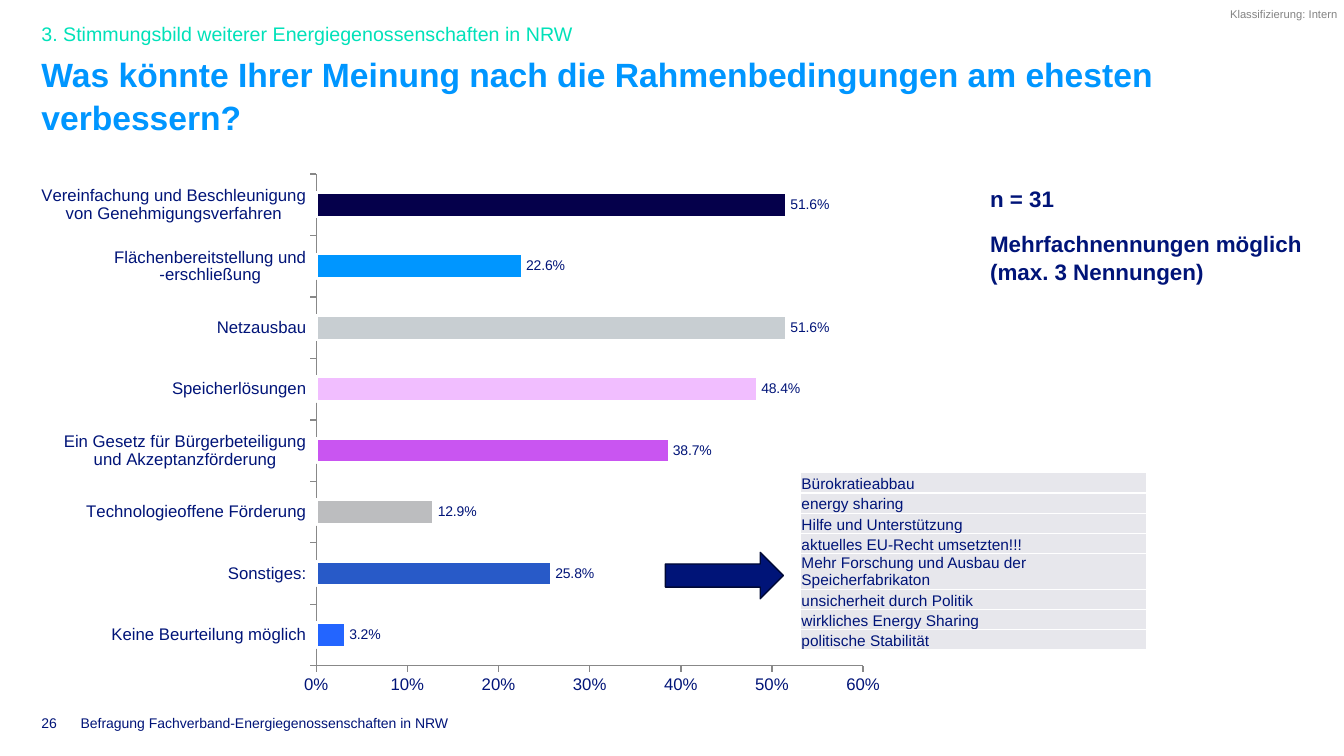
from lxml.etree import SubElement
from pptx import Presentation
from pptx.chart.data import CategoryChartData
from pptx.dml.color import RGBColor
from pptx.enum.chart import XL_CHART_TYPE as ChartType
from pptx.enum.chart import XL_LABEL_POSITION as LabelPos
from pptx.enum.chart import XL_TICK_LABEL_POSITION as TickLabelPos
from pptx.enum.chart import XL_TICK_MARK as TickMark
from pptx.enum.shapes import MSO_SHAPE as Shape
from pptx.enum.text import MSO_ANCHOR as Anchor
from pptx.enum.text import MSO_AUTO_SIZE as AutoSize
from pptx.enum.text import PP_ALIGN as Align
from pptx.oxml.ns import qn
from pptx.util import Inches, Pt

COLORS = {
    "navy": "001478", "sky": "0096FF", "mint": "00E1B9", "grey": "838383",
    "axis": "888888", "edge": "000935", "cell": "E7E7EC", "white": "FFFFFF",
    "bright": "2365FF", "royal": "285AC8", "silver": "BCBDBF", "violet": "C955F1",
    "pink": "F1BEFF", "mist": "C8CED2", "ink": "05004B",
}

ANSWERS = [
    ("Keine Beurteilung möglich", 0.032, "bright"),
    ("Sonstiges:", 0.258, "royal"),
    ("Technologieoffene Förderung", 0.129, "silver"),
    ("Ein Gesetz für Bürgerbeteiligung und Akzeptanzförderung", 0.387, "violet"),
    ("Speicherlösungen", 0.484, "pink"),
    ("Netzausbau", 0.516, "mist"),
    ("Flächenbereitstellung und -erschließung", 0.226, "sky"),
    ("Vereinfachung und Beschleunigung von Genehmigungsverfahren", 0.516, "ink"),
]

OTHER_ANSWERS = [
    ("Bürokratieabbau", 1),
    ("energy sharing", 1),
    ("Hilfe und Unterstützung", 1),
    ("aktuelles EU-Recht umsetzten!!!", 1),
    ("Mehr Forschung und Ausbau der Speicherfabrikaton", 1.75),
    ("unsicherheit durch Politik", 1),
    ("wirkliches Energy Sharing", 1),
    ("politische Stabilität", 1),
]

LEFT = 3.08
FOOT = 94.67


def rgb(name):
    return RGBColor.from_string(COLORS[name])


class SurveySlide:
    font = "Arial"

    def __init__(self, prs):
        self.width, self.height = prs.slide_width, prs.slide_height
        self.s = prs.slides.add_slide(prs.slide_layouts[1])

    def box(self, x, y, w, h):
        return (int(self.width * x / 100), int(self.height * y / 100),
                int(self.width * w / 100), int(self.height * h / 100))

    def style(self, font, size, color="navy", bold=False):
        font.name, font.size, font.bold = self.font, Pt(size), bold
        font.color.rgb = rgb(color)

    def fill_text(self, sp, lines, size, color="navy", bold=False,
                  anchor=Anchor.TOP, wrap=True, spacing=1.0, gap=0):
        tf = sp.text_frame
        tf.auto_size, tf.word_wrap, tf.vertical_anchor = AutoSize.NONE, wrap, anchor
        tf.margin_left = tf.margin_right = tf.margin_top = tf.margin_bottom = 0
        for i, line in enumerate(lines):
            p = tf.add_paragraph() if i else tf.paragraphs[0]
            p.alignment, p.line_spacing = Align.LEFT, spacing
            p.space_before = Pt(gap if i else 0)
            r = p.add_run()
            r.text = line
            self.style(r.font, size, color, bold)

    def placeholder(self, idx, area, line, size, color, **options):
        sp = self.s.placeholders[idx]
        sp.left, sp.top, sp.width, sp.height = self.box(*area)
        self.fill_text(sp, [line], size, color, **options)
        if idx:
            pPr = sp.text_frame.paragraphs[0]._p.get_or_add_pPr()
            pPr.set("marL", "0")
            pPr.set("indent", "0")
            SubElement(pPr, qn("a:buNone"))

    def text(self, area, lines, size, color="navy", **options):
        sp = self.s.shapes.add_textbox(*self.box(*area))
        self.fill_text(sp, lines, size, color, **options)

    def axis(self, axis):
        axis.has_major_gridlines = False
        axis.major_tick_mark, axis.minor_tick_mark = TickMark.OUTSIDE, TickMark.NONE
        axis.format.line.color.rgb = rgb("axis")
        axis.format.line.width = Pt(1)
        axis.tick_label_position = TickLabelPos.LOW
        self.style(axis.tick_labels.font, 12)

    def bars(self, area, answers, plot_area):
        names, values, colors = zip(*answers)
        data = CategoryChartData()
        data.categories = names
        data.add_series("Series 1", values)
        chart = self.s.shapes.add_chart(ChartType.BAR_CLUSTERED, *self.box(*area), data).chart
        chart.has_legend = chart.has_title = False
        self.style(chart.font, 10)
        self.axis(chart.category_axis)
        val = chart.value_axis
        self.axis(val)
        val.minimum_scale, val.maximum_scale, val.major_unit = 0, 0.6, 0.1
        val.tick_labels.number_format = "0%"
        val.tick_labels.number_format_is_linked = False

        plot = chart.plots[0]
        plot.gap_width, plot.vary_by_categories = 150, False
        plot.has_data_labels = True
        labels = plot.data_labels
        labels.show_value, labels.position = True, LabelPos.OUTSIDE_END
        labels.number_format, labels.number_format_is_linked = "#0.0%", False
        self.style(labels.font, 10)
        for i, color in enumerate(colors):
            fmt = plot.series[0].points[i].format
            fmt.fill.solid()
            fmt.fill.fore_color.rgb = rgb(color)
            fmt.line.color.rgb = rgb("white")
            fmt.line.width = Pt(2)

        area_xml = chart._chartSpace.chart.plotArea
        for old in area_xml.findall(qn("c:layout")):
            area_xml.remove(old)
        layout = SubElement(area_xml, qn("c:layout"))
        area_xml.insert(0, layout)
        manual = SubElement(layout, qn("c:manualLayout"))
        settings = {"layoutTarget": "inner", "xMode": "edge", "yMode": "edge"}
        settings.update(zip("xywh", plot_area))
        for tag, value in settings.items():
            SubElement(manual, qn(f"c:{tag}"), val=str(value))

    def table(self, x, y, w, row, entries):
        area = self.box(x, y, w, row * sum(span for _, span in entries))
        tbl = self.s.shapes.add_table(len(entries), 1, *area).table
        tbl.first_row = tbl.horz_banding = False
        for i, (line, span) in enumerate(entries):
            tbl.rows[i].height = int(self.height * row * span / 100)
            cell = tbl.cell(i, 0)
            cell.margin_left = cell.margin_right = cell.margin_top = Inches(0.01)
            cell.margin_bottom = 0
            cell.vertical_anchor = Anchor.BOTTOM
            for side in "LRTB":
                ln = SubElement(cell._tc.get_or_add_tcPr(), qn(f"a:ln{side}"), w=str(Pt(1)))
                SubElement(SubElement(ln, qn("a:solidFill")), qn("a:srgbClr"), val=COLORS["white"])
            cell.fill.solid()
            cell.fill.fore_color.rgb = rgb("cell")
            r = cell.text_frame.paragraphs[0].add_run()
            r.text = line
            self.style(r.font, 11)

    def arrow(self, area):
        sp = self.s.shapes.add_shape(Shape.RIGHT_ARROW, *self.box(*area))
        sp.shadow.inherit = False
        sp.fill.solid()
        sp.fill.fore_color.rgb = rgb("navy")
        sp.line.color.rgb = rgb("edge")
        sp.line.width = Pt(1)


def main():
    prs = Presentation()
    prs.slide_width, prs.slide_height = Inches(13.33), Inches(7.5)
    slide = SurveySlide(prs)
    slide.placeholder(0, (LEFT, 6.93, 93.92, 11.6),
                      "Was könnte Ihrer Meinung nach die Rahmenbedingungen am ehesten verbessern?",
                      24, "sky", bold=True, spacing=1.05)
    slide.placeholder(1, (LEFT, 2.27, 61.74, 3.73),
                      "3. Stimmungsbild weiterer Energiegenossenschaften in NRW",
                      14, "mint", anchor=Anchor.BOTTOM)
    slide.text((91.52, 0.93, 8.48, 1.73), ["Klassifizierung: Intern"], 8, "grey", wrap=False)
    slide.text((73.67, 24.27, 23.33, 11.6),
               ["n = 31", "Mehrfachnennungen möglich (max. 3 Nennungen)"],
               16, bold=True, spacing=1.05, gap=12)
    slide.bars((LEFT, 21.6, 63.69, 71.47), ANSWERS, (0.32, 0.02, 0.64, 0.91))
    slide.table(59.56, 62.53, 25.73, 2.68, OTHER_ANSWERS)
    slide.arrow((49.51, 73.07, 8.78, 6.13))
    slide.text((LEFT, FOOT, 1.8, 2.13), ["26"], 10, anchor=Anchor.BOTTOM, wrap=False)
    slide.text((6, FOOT, 42.24, 2.13), ["Befragung Fachverband-Energiegenossenschaften in NRW"],
               10, anchor=Anchor.BOTTOM, wrap=False)
    prs.save("out.pptx")


if __name__ == "__main__":
    main()
